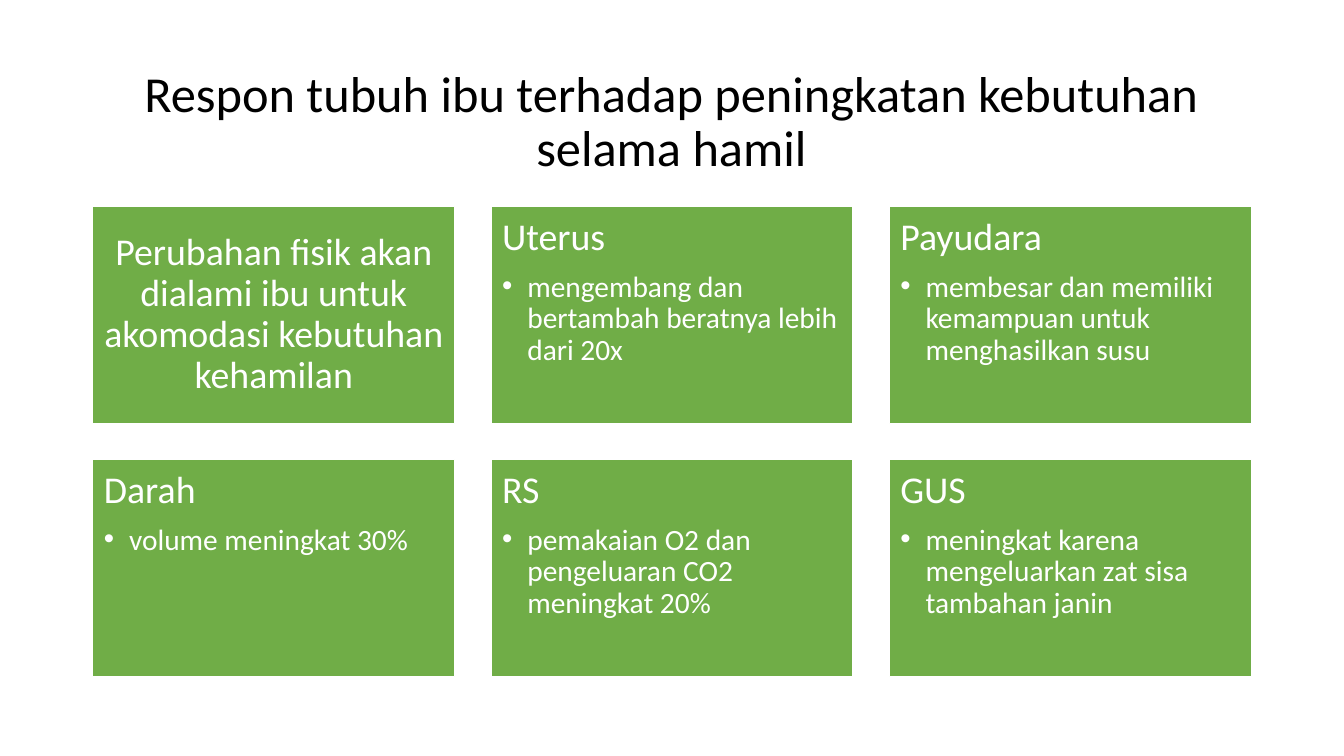
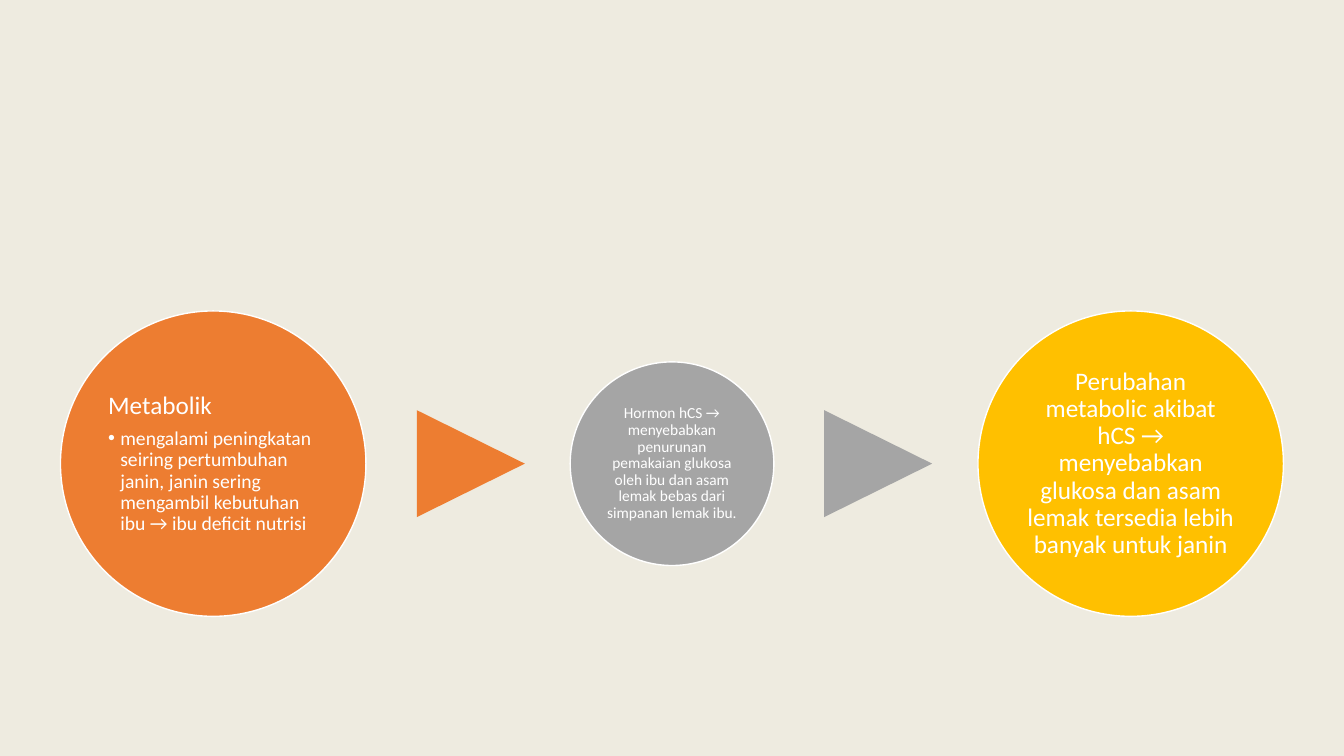
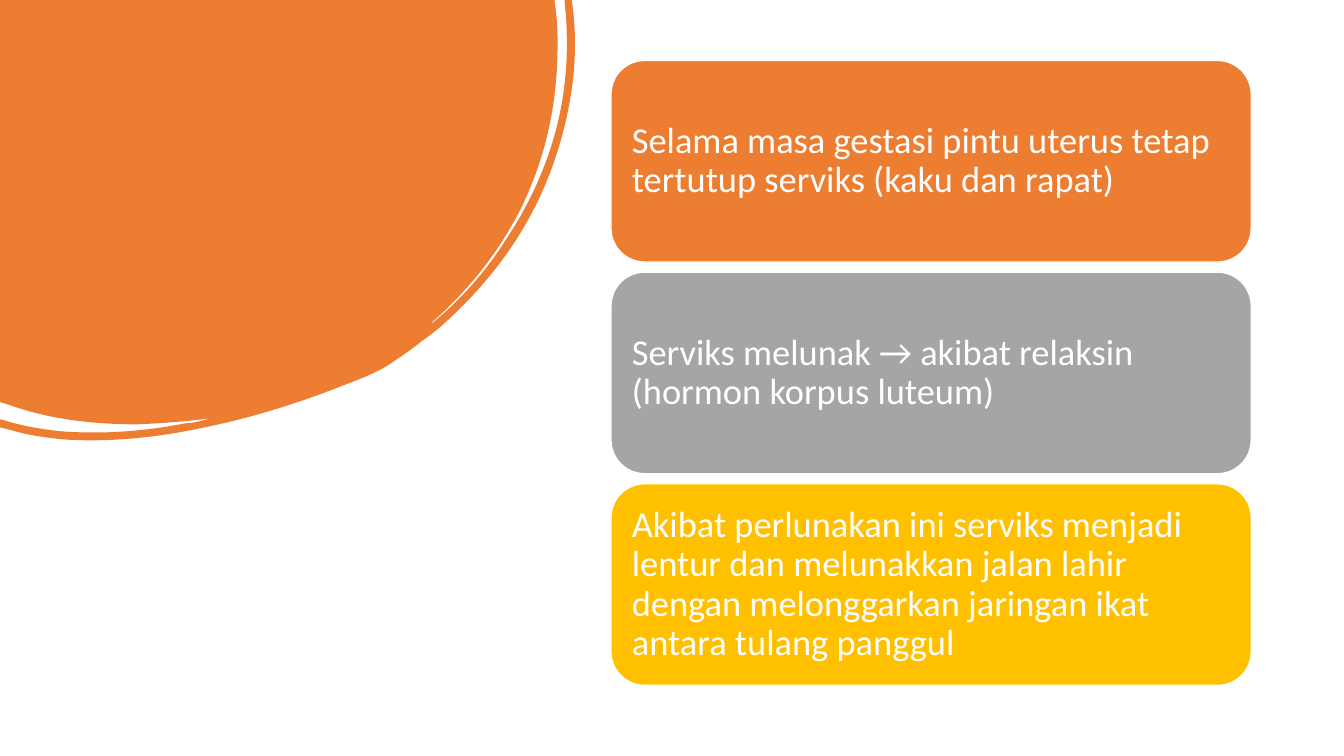
from lxml import etree
from pptx import Presentation
from pptx.dml.color import RGBColor
from pptx.enum.shapes import MSO_SHAPE
from pptx.enum.text import MSO_ANCHOR, PP_ALIGN
from pptx.oxml.ns import qn
from pptx.util import Inches, Pt

# Shared style
FONT = "Calibri"
BULLET_FONT = "Arial"
BLACK = RGBColor(0x00, 0x00, 0x00)
WHITE = RGBColor(0xFF, 0xFF, 0xFF)
GREEN = RGBColor(0x70, 0xAD, 0x47)
ORANGE = RGBColor(0xED, 0x7D, 0x31)
GRAY = RGBColor(0xA5, 0xA5, 0xA5)
GOLD = RGBColor(0xFF, 0xC0, 0x00)
PALE_GRAY = RGBColor(0xF2, 0xF2, 0xF2)
DARK_GOLD = RGBColor(0xBF, 0x90, 0x00)

RECT = MSO_SHAPE.RECTANGLE
ROUND_RECT = MSO_SHAPE.ROUNDED_RECTANGLE
OVAL = MSO_SHAPE.OVAL
TRIANGLE = MSO_SHAPE.ISOSCELES_TRIANGLE
LEFT, CENTER = PP_ALIGN.LEFT, PP_ALIGN.CENTER
TOP, MIDDLE = MSO_ANCHOR.TOP, MSO_ANCHOR.MIDDLE

SLIDE_W, SLIDE_H = 13.33, 7.5
LINE_SPACING = 0.9

# Slide 1: heading and optional bullet of each card
CARDS = [
    ("Perubahan fisik akan dialami ibu untuk akomodasi kebutuhan kehamilan", None),
    ("Uterus", "mengembang dan bertambah beratnya lebih dari 20x"),
    ("Payudara", "membesar dan memiliki kemampuan untuk menghasilkan susu"),
    ("Darah", "volume meningkat 30%"),
    ("RS", "pemakaian O2 dan pengeluaran CO2 meningkat 20%"),
    ("GUS", "meningkat karena mengeluarkan zat sisa tambahan janin"),
]

# Slide 2: diameter, colour, text size, inset, heading, bullet
STAGES = [
    (3.03, ORANGE, 18, 0.03, "Metabolik",
     "mengalami peningkatan seiring pertumbuhan janin, janin sering "
     "mengambil kebutuhan ibu → ibu deficit nutrisi"),
    (2.02, GRAY, 11, 0.02,
     "Hormon hCS → menyebabkan penurunan pemakaian glukosa oleh ibu dan "
     "asam lemak bebas dari simpanan lemak ibu.", None),
    (3.03, GOLD, 18, 0.03,
     "Perubahan metabolic akibat hCS → menyebabkan glukosa dan asam lemak "
     "tersedia lebih banyak untuk janin", None),
]

# Slide 3: colour and statement of each panel
PANELS = [
    (ORANGE, "Selama masa gestasi pintu uterus tetap tertutup serviks (kaku dan rapat)"),
    (GRAY, "Serviks melunak → akibat relaksin (hormon korpus luteum)"),
    (GOLD, "Akibat perlunakan ini serviks menjadi lentur dan melunakkan jalan lahir "
           "dengan melonggarkan jaringan ikat antara tulang panggul"),
]

# Corner blob from (0, 0): two numbers draw a line, six a Bézier curve
BLOB = [
    (5.5, 0), (5.52, 0.17),
    (5.53, 0.26, 5.53, 0.36, 5.53, 0.45), (5.53, 1.01, 5.42, 1.54, 5.18, 2.04),
    (4.96, 2.49, 4.65, 2.88, 4.27, 3.21), (4.29, 3.21, 4.3, 3.19, 4.32, 3.18),
    (4.59, 2.95, 4.82, 2.69, 5.01, 2.39), (5.43, 1.76, 5.65, 1.07, 5.62, 0.3),
    (5.62, 0.21, 5.61, 0.12, 5.6, 0.03), (5.6, 0), (5.67, 0), (5.68, 0.07),
    (5.74, 0.54, 5.68, 1.02, 5.53, 1.5), (5.33, 2.14, 4.97, 2.68, 4.48, 3.14),
    (4.39, 3.23, 4.29, 3.31, 4.19, 3.38), (4.09, 3.46, 3.99, 3.53, 3.87, 3.61),
    (3.75, 3.69, 3.6, 3.75, 3.44, 3.81), (2.99, 3.99, 2.52, 4.14, 2.03, 4.24),
    (1.57, 4.34, 1.1, 4.39, 0.63, 4.36), (0.45, 4.34, 0.28, 4.32, 0.12, 4.27),
    (0, 4.24), (0, 4.16), (0.04, 4.17),
    (0.23, 4.23, 0.42, 4.26, 0.61, 4.28), (1.03, 4.31, 1.43, 4.28, 1.84, 4.2),
    (1.89, 4.2, 1.93, 4.19, 1.98, 4.18), (2.02, 4.17, 2.06, 4.16, 2.1, 4.15),
    (1.86, 4.18, 1.61, 4.2, 1.36, 4.21), (0.92, 4.21, 0.48, 4.16, 0.07, 4.01),
    (0, 3.99),
]


def paint(shape, color, outlined=False):
    shape.shadow.inherit = False
    shape.fill.solid()
    shape.fill.fore_color.rgb = color
    if outlined:
        shape.line.color.rgb = WHITE
        shape.line.width = Pt(1)
    else:
        shape.line.fill.background()


def add_block(slide, kind, box, color, outlined=False):
    block = slide.shapes.add_shape(kind, *map(Inches, box))
    paint(block, color, outlined)
    return block


def set_frame(frame, anchor, inset=None):
    frame.word_wrap = True
    frame.vertical_anchor = anchor
    if inset is not None:
        frame.margin_left = frame.margin_right = Inches(inset)
        frame.margin_top = frame.margin_bottom = Inches(inset)


def write(paragraph, text, size, color=WHITE, align=LEFT, after=0.35):
    """Fill a paragraph; the space after it is a share of the text size."""
    paragraph.alignment = align
    paragraph.line_spacing = LINE_SPACING
    paragraph.space_after = Pt(round(size * after, 1))
    run = paragraph.add_run()
    run.text = text
    run.font.name = FONT
    run.font.size = Pt(size)
    run.font.color.rgb = color


def write_bullet(frame, text, size, indent):
    paragraph = frame.add_paragraph()
    paragraph.level = 1
    write(paragraph, text, size, after=0.15)
    properties = paragraph._p.get_or_add_pPr()
    properties.set("marL", str(Inches(indent)))
    properties.set("indent", str(-Inches(indent)))
    etree.SubElement(properties, qn("a:buFont")).set("typeface", BULLET_FONT)
    etree.SubElement(properties, qn("a:buChar")).set("char", "•")


def add_title(slide, text, box):
    title = slide.shapes.add_textbox(*map(Inches, box))
    set_frame(title.text_frame, MIDDLE)
    write(title.text_frame.paragraphs[0], text, 36, BLACK, CENTER, after=0)


def add_cards(slide, left, top):
    """Grid of three columns, filled row by row."""
    width, height, gap = 3.59, 2.15, 0.36
    for index, (heading, detail) in enumerate(CARDS):
        row, column = divmod(index, 3)
        box = (left + column * (width + gap), top + row * (height + gap), width, height)
        frame = add_block(slide, RECT, box, GREEN, True).text_frame
        set_frame(frame, TOP if detail else MIDDLE, 0.11)
        write(frame.paragraphs[0], heading, 27, align=LEFT if detail else CENTER)
        if detail:
            write_bullet(frame, detail, 21, 0.25)


def add_tinted_backdrop(slide):
    box = (0, 0, SLIDE_W, SLIDE_H)
    add_block(slide, RECT, box, PALE_GRAY)
    tint = add_block(slide, RECT, box, DARK_GOLD)
    color = tint._element.spPr.find(qn("a:solidFill"))[0]
    etree.SubElement(color, qn("a:alpha")).set("val", "7000")


def add_process(slide, left, middle):
    """Circles centred on one line, with an arrowhead after all but the last."""
    pitch, arrow_w, arrow_h = 4.55, 1.06, 1.07
    first_center = left + STAGES[0][0] / 2
    arrow_centers = (left + 4.07, left + 8.11)
    for index, (diameter, color, size, inset, heading, detail) in enumerate(STAGES):
        center = first_center + index * pitch
        box = (center - diameter / 2, middle - diameter / 2, diameter, diameter)
        frame = add_block(slide, OVAL, box, color, True).text_frame
        set_frame(frame, MIDDLE, inset)
        write(frame.paragraphs[0], heading, size, align=LEFT if detail else CENTER)
        if detail:
            write_bullet(frame, detail, 14, 0.12)
        if index < len(arrow_centers):
            arrow_box = (arrow_centers[index] - arrow_w / 2, middle - arrow_h / 2,
                         arrow_w, arrow_h)
            add_block(slide, TRIANGLE, arrow_box, color).rotation = 90


def add_corner_blob(slide, left, top):
    """Build the outline from its end points, then bend the curved segments."""
    builder = slide.shapes.build_freeform(0, 0)
    builder.add_line_segments([(Inches(s[-2]), Inches(s[-1])) for s in BLOB])
    blob = builder.convert_to_shape(Inches(left), Inches(top))
    paint(blob, ORANGE)
    sides = list(blob._element.iter(qn("a:lnTo")))
    for side, segment in zip(sides, BLOB):
        if len(segment) == 6:
            side.tag = qn("a:cubicBezTo")
            controls = (segment[0:2], segment[2:4])
            for position, (x, y) in enumerate(controls):
                point = etree.Element(qn("a:pt"))
                point.set("x", str(Inches(x)))
                point.set("y", str(Inches(y)))
                side.insert(position, point)


def add_panels(slide, left, top):
    width, height, pitch = 6.35, 2, 2.1
    for index, (color, statement) in enumerate(PANELS):
        box = (left, top + index * pitch, width, height)
        frame = add_block(slide, ROUND_RECT, box, color, True).text_frame
        set_frame(frame, MIDDLE, 0.11)
        write(frame.paragraphs[0], statement, 26)


def main():
    deck = Presentation()
    deck.slide_width, deck.slide_height = Inches(SLIDE_W), Inches(SLIDE_H)
    blank = deck.slide_layouts[6]

    # Body responses
    responses = deck.slides.add_slide(blank)
    add_title(responses, "Respon tubuh ibu terhadap peningkatan kebutuhan selama hamil",
              (0.91, 0.6, 11.5, 1.24))
    add_cards(responses, 0.92, 2.05)

    # Metabolic process
    metabolism = deck.slides.add_slide(blank)
    add_tinted_backdrop(metabolism)
    add_process(metabolism, 0.6, 4.6)

    # Cervix
    cervix = deck.slides.add_slide(blank)
    add_corner_blob(cervix, 0, 0)
    add_panels(cervix, 6.06, 0.6)

    deck.save("out.pptx")


if __name__ == "__main__":
    main()
